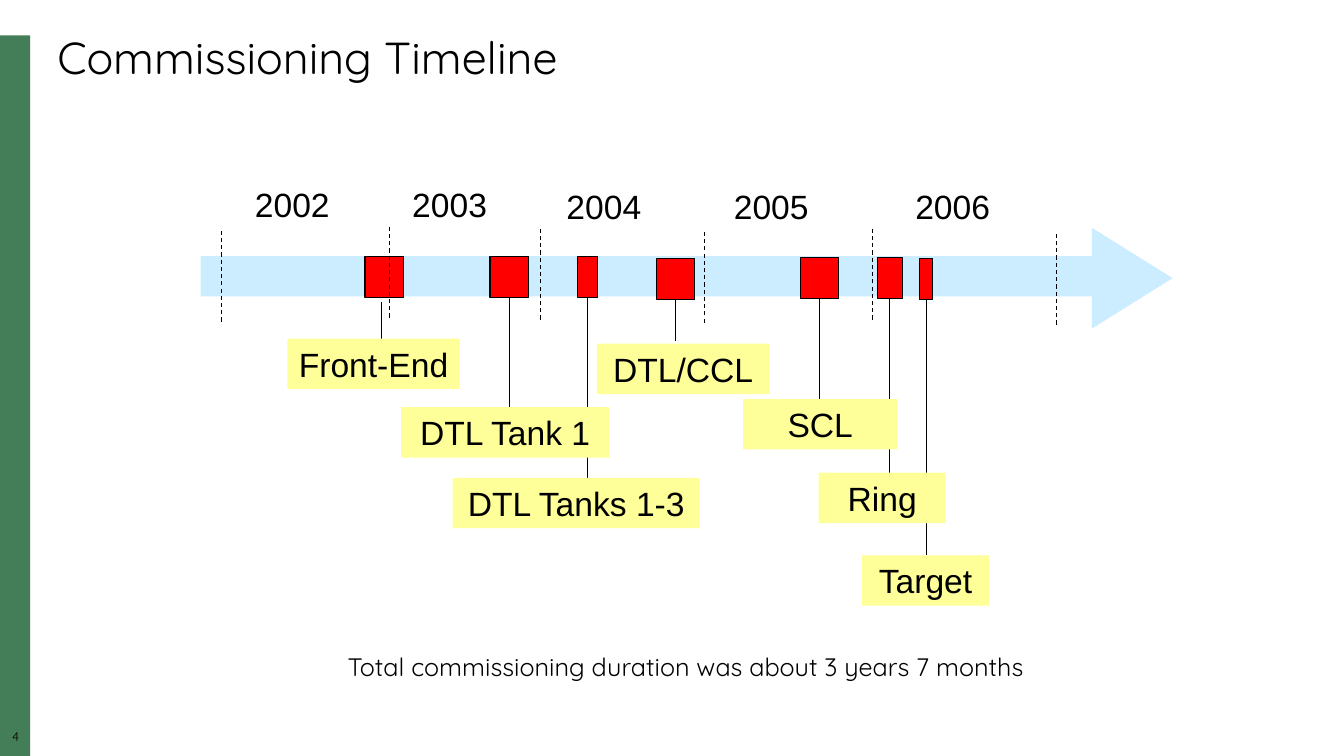
"""Build the commissioning timeline slide."""
import pptx
import pptx.util
import pptx.dml.color
import pptx.enum.dml
import pptx.enum.shapes
import pptx.enum.text
import pptx.oxml

RGB = pptx.dml.color.RGBColor
BLACK = RGB(0x00, 0x00, 0x00)
GREEN = RGB(0x44, 0x7E, 0x59)
BLUE = RGB(0xCC, 0xEC, 0xFF)
RED = RGB(0xFF, 0x00, 0x00)
YELLOW = RGB(0xFF, 0xFF, 0x99)
SHAPE = pptx.enum.shapes.MSO_SHAPE
ALIGN = pptx.enum.text.PP_ALIGN
ANCHOR = pptx.enum.text.MSO_ANCHOR
PX = 9144

deck = pptx.Presentation()
deck.slide_width = 1333 * PX
deck.slide_height = 750 * PX
slide = deck.slides.add_slide(deck.slide_layouts[6])


def draw(area, fill, kind=SHAPE.RECTANGLE, edge=False):
    shape = slide.shapes.add_shape(kind, *(n * PX for n in area))
    shape.shadow.inherit = False
    shape.fill.solid()
    shape.fill.fore_color.rgb = fill
    if edge:
        shape.line.color.rgb = BLACK
        shape.line.width = pptx.util.Pt(0.75)
    else:
        shape.line.fill.background()
    return shape


def write(text, area, size=24, font="Arial", align=ALIGN.LEFT, space=1.0,
          anchor=ANCHOR.TOP, wrap=True, inset=True, fill=None):
    if fill is None:
        shape = slide.shapes.add_textbox(*(n * PX for n in area))
    else:
        shape = draw(area, fill)
    frame = shape.text_frame
    frame.word_wrap = wrap
    frame.vertical_anchor = anchor
    if not inset:
        frame.margin_left = frame.margin_right = 0
        frame.margin_top = frame.margin_bottom = 0
    para = frame.paragraphs[0]
    para.alignment = align
    para.line_spacing = space
    run = para.add_run()
    run.text = text
    run.font.size = pptx.util.Pt(size)
    run.font.name = font
    run.font.color.rgb = BLACK


draw((0, 35, 30, 715), GREEN)
write("4", (0, 725, 31, 17), size=9, font="Quicksand", align=ALIGN.CENTER,
      space=0.9, inset=False)
write("Commissioning Timeline", (47, 30, 1249, 59), size=32,
      font="Quicksand", space=0.9, anchor=ANCHOR.MIDDLE)

draw((199, 254, 898, 40), BLUE)
head = draw((1073, 236, 100, 80), BLUE, kind=SHAPE.ISOSCELES_TRIANGLE)
head.rotation = 90

for year, left, top in [(2002, 243, 178), (2003, 399, 178), (2004, 552, 180),
                        (2005, 718, 180), (2006, 898, 180)]:
    write(str(year), (left, top, 132, 50))

# name, block left, top, width, label left, top, width, stem end
stages = [
    ("Front-End", 362, 254, 38, 285, 336, 171, 343),
    ("DTL Tank 1", 486, 254, 38, 398, 404, 206, 409),
    ("DTL Tanks 1-3", 573, 254, 20, 449, 474, 245, 478),
    ("DTL/CCL", 651, 256, 38, 592, 341, 171, 338),
    ("SCL", 794, 255, 38, 737, 396, 153, 396),
    ("Ring", 870, 255, 25, 812, 469, 126, 477),
    ("Target", 912, 256, 13, 855, 551, 126, 551),
]

lines = [(x, top, top + 93, None)
         for x, top in [(220, 229), (386, 225), (536, 227),
                        (699, 230), (865, 227), (1048, 232)]]
for name, left, top, width, *label, end in stages:
    block = draw((left, top, width, 41), RED, edge=True)
    if name == "Front-End":
        lines.append((378, 300, end, "free"))
    else:
        lines.append((left + width // 2, top + 41, end, block))

for x, top, end, start in lines:
    line = slide.shapes.add_connector(
        pptx.enum.shapes.MSO_CONNECTOR.STRAIGHT,
        x * PX, top * PX, x * PX, end * PX)
    line.line.color.rgb = BLACK
    line.line.width = pptx.util.Pt(0.75)
    if start is None:
        line.line.dash_style = pptx.enum.dml.MSO_LINE.DASH
    elif start != "free":
        line.begin_connect(start, 2)
        line.end_x = line.begin_x
    line._element.spPr.append(pptx.oxml.parse_xml(
        '<a:effectLst xmlns:a='
        '"http://schemas.openxmlformats.org/drawingml/2006/main"/>'))

for name, *block, left, top, width, end in stages:
    write(name, (left, top, width, 50), align=ALIGN.CENTER, fill=YELLOW)

write("Total commissioning duration was about 3 years 7 months",
      (335, 645, 722, 37), size=18, font="Quicksand", space=0.9, wrap=False)

deck.save("out.pptx")
